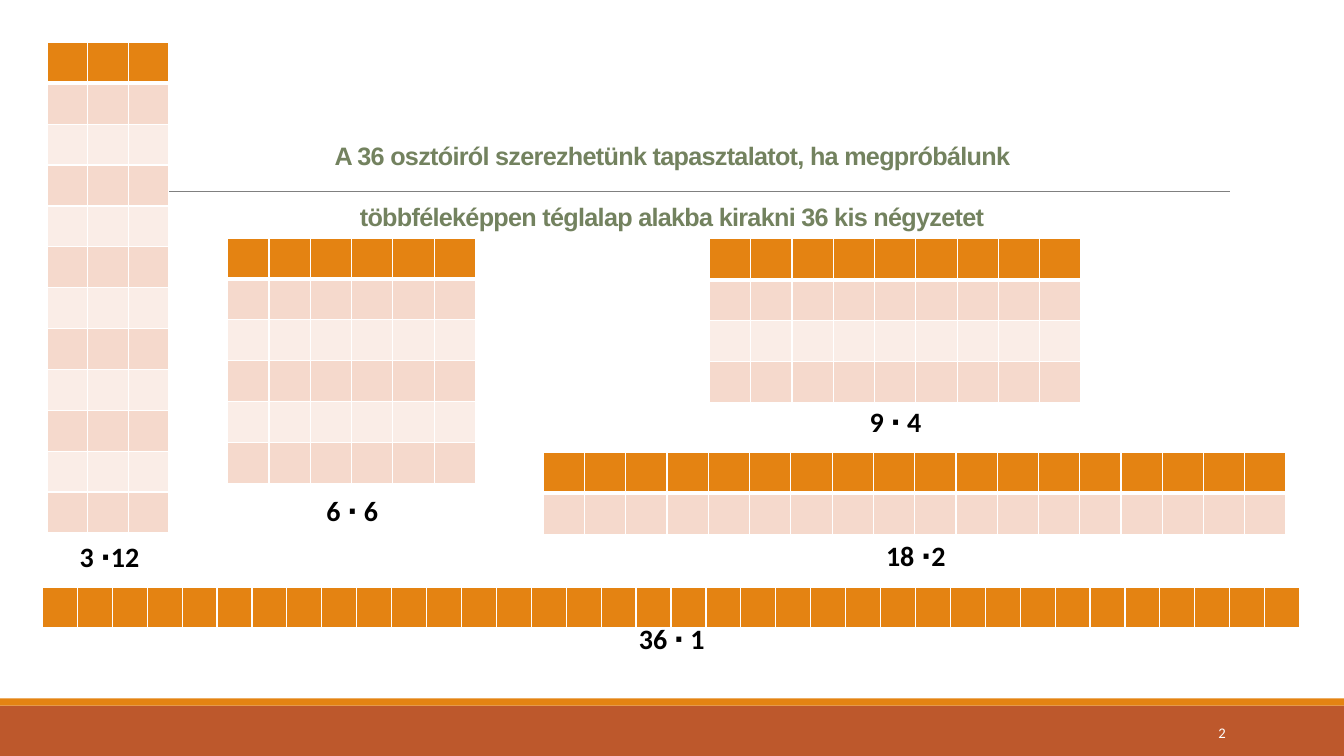
from lxml.etree import SubElement
from pptx import Presentation
from pptx.dml.color import RGBColor
from pptx.enum.shapes import MSO_CONNECTOR, MSO_SHAPE
from pptx.enum.text import MSO_ANCHOR, PP_ALIGN
from pptx.oxml.ns import qn
from pptx.util import Cm, Pt

HUES = {
    "rust": "BD582C",
    "orange": "E48312",
    "rose": "F5D9CC",
    "blush": "FAEDE7",
    "gray": "808080",
    "green": "73825F",
    "black": "000000",
    "white": "FFFFFF",
}


def write(shape, text, hue, frame_form, para_form, font_form):
    frame = shape.text_frame
    para = frame.paragraphs[0]
    run = para.add_run()
    run.text = text
    run.font.color.rgb = RGBColor.from_string(HUES[hue])
    for target, form in ((frame, frame_form), (para, para_form), (run.font, font_form)):
        for key, value in form.items():
            setattr(target, key, value)
    return run


def edge(cell, side, width):
    line = SubElement(cell._tc.get_or_add_tcPr(), qn(f"a:ln{side}"), w=str(Pt(width)))
    fill = SubElement(line, qn("a:solidFill"))
    SubElement(fill, qn("a:srgbClr"), val=HUES["white"])


deck = Presentation()
deck.slide_width, deck.slide_height = Cm(33.87), Cm(19.05)
slide = deck.slides.add_slide(deck.slide_layouts[5])
shapes = slide.shapes

for top, height, hue in ((17.78, 1.27, "rust"), (17.6, 0.18, "orange")):
    band = shapes.add_shape(MSO_SHAPE.RECTANGLE, 0, Cm(top), deck.slide_width, Cm(height))
    band.shadow.inherit = False
    band.fill.solid()
    band.fill.fore_color.rgb = RGBColor.from_string(HUES[hue])
    band.line.fill.background()

rule = shapes.add_connector(MSO_CONNECTOR.STRAIGHT, Cm(3.33), Cm(4.82), Cm(31), Cm(4.82))
rule.line.color.rgb = RGBColor.from_string(HUES["gray"])
rule.line.width = Pt(0.5)
SubElement(rule._element.spPr, qn("a:effectLst"))

title = shapes.title
place = {"left": Cm(6.2), "top": Cm(1.09), "width": Cm(21.46), "height": Cm(6.71)}
for key, value in place.items():
    setattr(title, key, value)
head = write(
    title,
    "A 36 osztóiról szerezhetünk tapasztalatot, ha megpróbálunk többféleképpen téglalap alakba kirakni 36 kis négyzetet",
    "green",
    {
        "word_wrap": True,
        "vertical_anchor": MSO_ANCHOR.BOTTOM,
        "margin_left": Cm(0.6),
        "margin_right": Cm(0.6),
        "margin_bottom": Cm(1.97),
    },
    {"alignment": PP_ALIGN.CENTER, "line_spacing": 2.0},
    {"name": "Arial", "size": Pt(18), "bold": True},
)
head._r.get_or_add_rPr().set("spc", "-50")

page = shapes.add_textbox(Cm(27.51), Cm(17.94), Cm(3.63), Cm(1.02))
write(
    page,
    "2",
    "white",
    {"word_wrap": True, "vertical_anchor": MSO_ANCHOR.MIDDLE},
    {"alignment": PP_ALIGN.RIGHT},
    {"name": "Calibri", "size": Pt(10.5)},
)

grids = [
    (6, 6, 5.74, 6, 1.04, "6 ∙ 6", 7.57, 12.32),
    (9, 4, 17.88, 6.02, 1.04, "9 ∙ 4", 21.26, 10.08),
    (18, 2, 13.69, 11.4, 1.04, "18 ∙2", 21.77, 13.44),
    (36, 1, 1.07, 14.81, 0.88, "36 ∙ 1", 15.62, 15.54),
    (3, 12, 1.19, 1.07, 1.02, "3 ∙12", 1.45, 13.46),
]
side = 1.03
for cols, rows, left, top, width, text, text_left, text_top in grids:
    grid = shapes.add_table(
        rows, cols, Cm(left), Cm(top), Cm(cols * width), Cm(rows * side)
    ).table
    for col in grid.columns:
        col.width = Cm(width)
    for r, row in enumerate(grid.rows):
        row.height = Cm(side)
        hue = "orange" if r == 0 else "rose" if r % 2 else "blush"
        for cell in row.cells:
            edge(cell, "L", 1)
            edge(cell, "R", 1)
            edge(cell, "T", 3 if r == 1 else 1)
            edge(cell, "B", 3 if r == 0 else 1)
            cell.fill.solid()
            cell.fill.fore_color.rgb = RGBColor.from_string(HUES[hue])
    label = shapes.add_textbox(Cm(text_left), Cm(text_top), Cm(2.62), Cm(1.12))
    write(
        label,
        text,
        "black",
        {"word_wrap": True},
        {"alignment": PP_ALIGN.CENTER},
        {"name": "Calibri", "size": Pt(20), "bold": True},
    )

deck.save("out.pptx")
